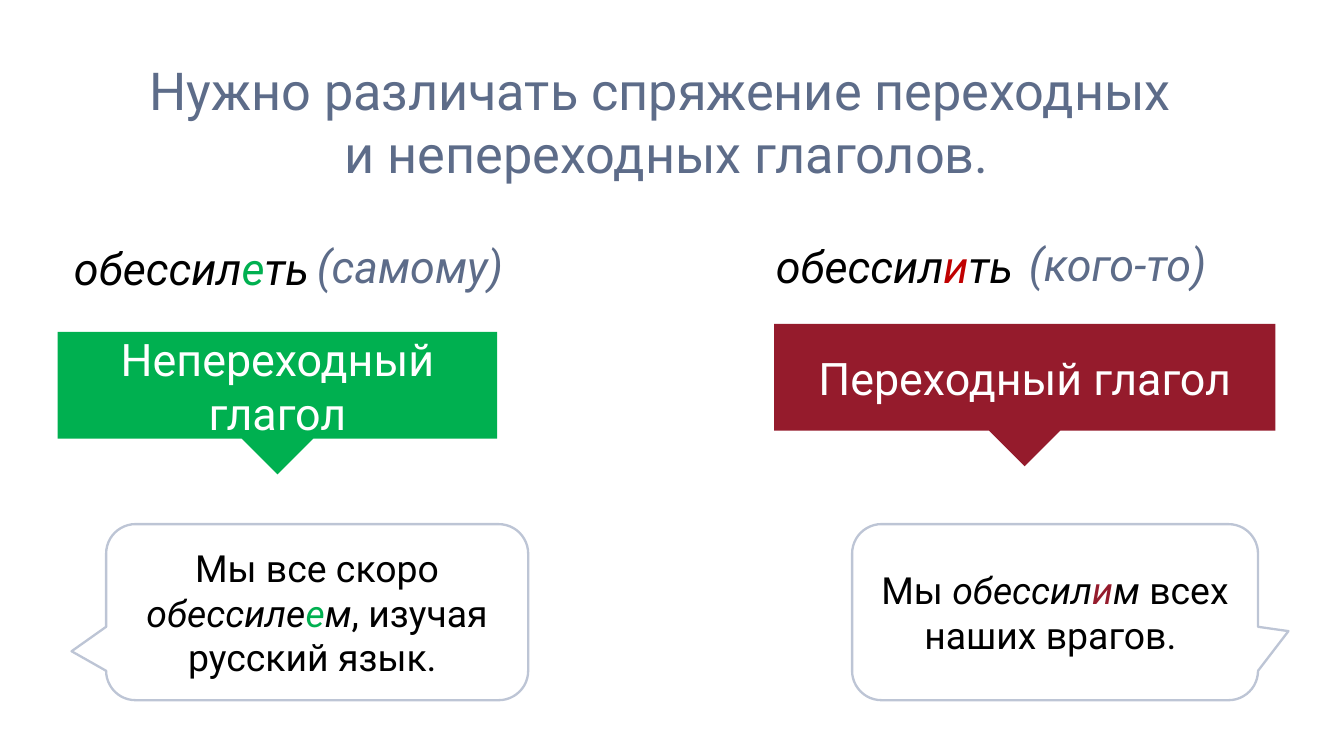
"""Build a slide on conjugating transitive and intransitive verbs."""
from pptx import Presentation
from pptx.dml.color import RGBColor
from pptx.enum.shapes import MSO_SHAPE
from pptx.enum.text import MSO_ANCHOR, MSO_AUTO_SIZE, PP_ALIGN
from pptx.oxml.ns import qn
from pptx.util import Inches, Pt
from lxml.etree import SubElement

THEME = {
    "font": "Roboto",
    "title": 28, "verb": 24, "example": 20,
    "slate": "5D6C89", "black": "000000", "white": "FFFFFF",
    "green": "00B050", "red": "C00000", "crimson": "951B2C", "navy": "002060",
    "line": 1.25, "line_alpha": 25,
}

TITLE_BOX = (0.43, 0.41, 9.06, 0.98)
TITLE = ["Нужно различать спряжение переходных ", "и непереходных глаголов."]

COLUMNS = [
    {
        "verb": [("обессил", "black"), ("е", "green"), ("ть", "black")],
        "verb_box": (0.23, 1.66, 2.39, 0.55),
        "hint": "(самому)", "hint_box": (2.11, 1.65, 1.88, 0.55),
        "label": "Непереходный глагол", "label_box": (0.43, 2.47, 3.27, 1.06),
        "fill": "green",
        "example": [("Мы все скоро ", "black", False), ("обессиле", "black", True),
                    ("е", "green", True), ("м", "black", True),
                    (", изучая русский язык. ", "black", False)],
        "example_box": (0.79, 3.9, 3.14, 1.31), "tail": (-0.582, 0.222),
    },
    {
        "verb": [("обессил", "black"), ("и", "red"), ("ть", "black")],
        "verb_box": (5.46, 1.65, 2.39, 0.55),
        "hint": "(кого-то)", "hint_box": (7.12, 1.63, 2.39, 0.55),
        "label": "Переходный глагол", "label_box": (5.76, 2.41, 3.73, 1.06),
        "fill": "crimson",
        "example": [("Мы ", "black", False), ("обессил", "black", True),
                    ("и", "crimson", True), ("м", "black", True),
                    (" всех наших врагов. ", "black", False)],
        "example_box": (6.34, 3.9, 3.02, 1.31), "tail": (0.575, 0.108),
    },
]


def color(name):
    return RGBColor.from_string(THEME[name])


def lengths(box):
    return [Inches(v) for v in box]


def write(p, runs, size):
    p.alignment = PP_ALIGN.CENTER
    p.font.name = THEME["font"]
    p.font.size = Pt(THEME[size])
    for text, name, italic in runs:
        r = p.add_run()
        r.text = text
        r.font.name = THEME["font"]
        r.font.size = Pt(THEME[size])
        r.font.color.rgb = color(name)
        r.font.italic = italic


def add_title(s):
    sp = s.shapes.title
    sp.left, sp.top, sp.width, sp.height = lengths(TITLE_BOX)
    tf = sp.text_frame
    tf.auto_size = MSO_AUTO_SIZE.NONE
    tf.vertical_anchor = MSO_ANCHOR.MIDDLE
    for i, line in enumerate(TITLE):
        p = tf.add_paragraph() if i else tf.paragraphs[0]
        p.space_before = Pt(0)
        write(p, [(line, "slate", False)], "title")


def add_verb(s, box, runs):
    tf = s.shapes.add_textbox(*lengths(box)).text_frame
    tf.word_wrap = True
    tf.auto_size = MSO_AUTO_SIZE.SHAPE_TO_FIT_TEXT
    p = tf.paragraphs[0]
    p.line_spacing = 1.2
    write(p, [(text, name, True) for text, name in runs], "verb")


def add_callout(s, kind, box, adjustments, fill, runs, size):
    sp = s.shapes.add_shape(kind, *lengths(box))
    sp.shadow.inherit = False
    for i, value in enumerate(adjustments):
        sp.adjustments[i] = value
    sp.fill.solid()
    sp.fill.fore_color.rgb = color(fill)
    sp.line.fill.background()
    tf = sp.text_frame
    tf.word_wrap = True
    tf.vertical_anchor = MSO_ANCHOR.MIDDLE
    write(tf.paragraphs[0], runs, size)
    return sp


def outline(sp):
    sp.line.color.rgb = color("navy")
    sp.line.width = Pt(THEME["line"])
    clr = sp._element.xpath("./p:spPr/a:ln//a:srgbClr")[0]
    SubElement(clr, qn("a:alpha")).set("val", str(THEME["line_alpha"] * 1000))


def main():
    prs = Presentation()
    prs.slide_width = Inches(10)
    prs.slide_height = prs.slide_width * 9 // 16
    s = prs.slides.add_slide(prs.slide_layouts[5])
    add_title(s)
    for col in COLUMNS:
        add_verb(s, col["verb_box"], col["verb"])
        add_verb(s, col["hint_box"], [(col["hint"], "slate")])
        add_callout(s, MSO_SHAPE.DOWN_ARROW_CALLOUT, col["label_box"],
                    (0.25, 0.25, 0.25, 0.75), col["fill"],
                    [(col["label"], "white", False)], "verb")
        outline(add_callout(s, MSO_SHAPE.ROUNDED_RECTANGULAR_CALLOUT,
                            col["example_box"], (*col["tail"], 0.167), "white",
                            col["example"], "example"))
    prs.save("out.pptx")


if __name__ == "__main__":
    main()
